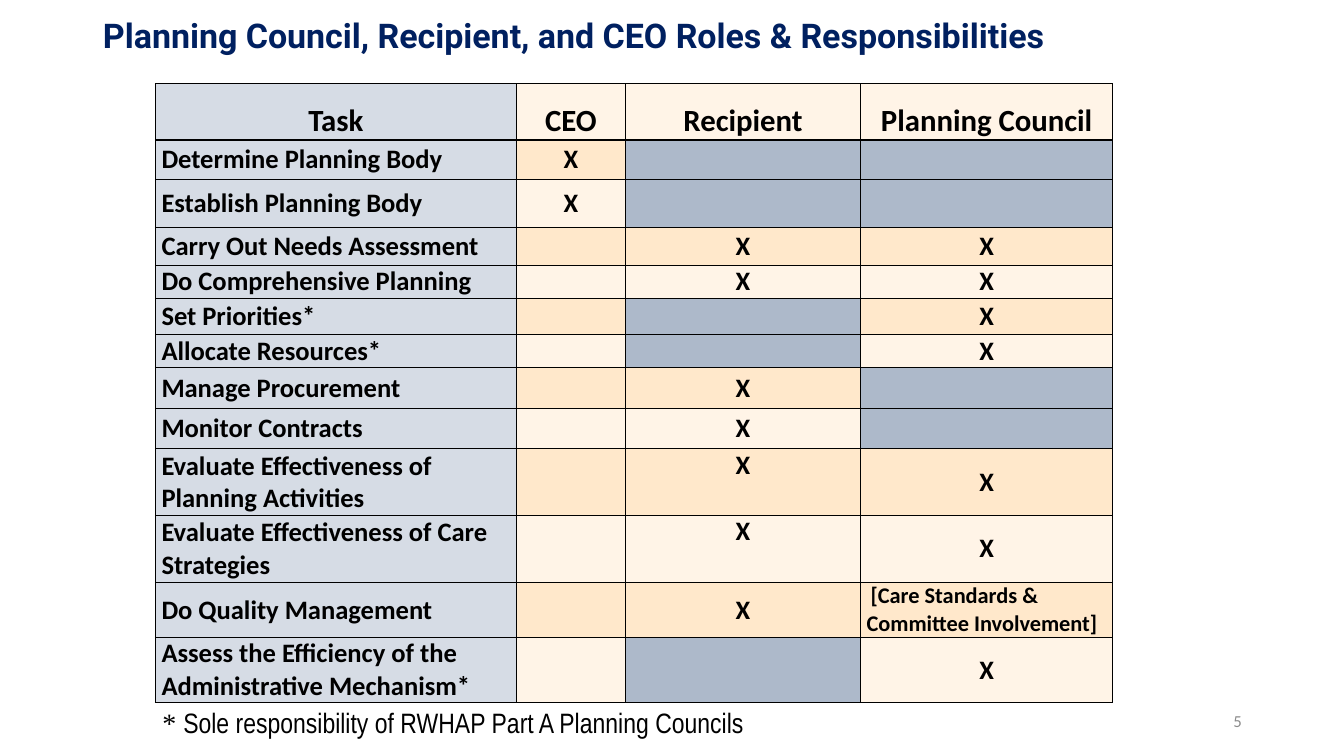
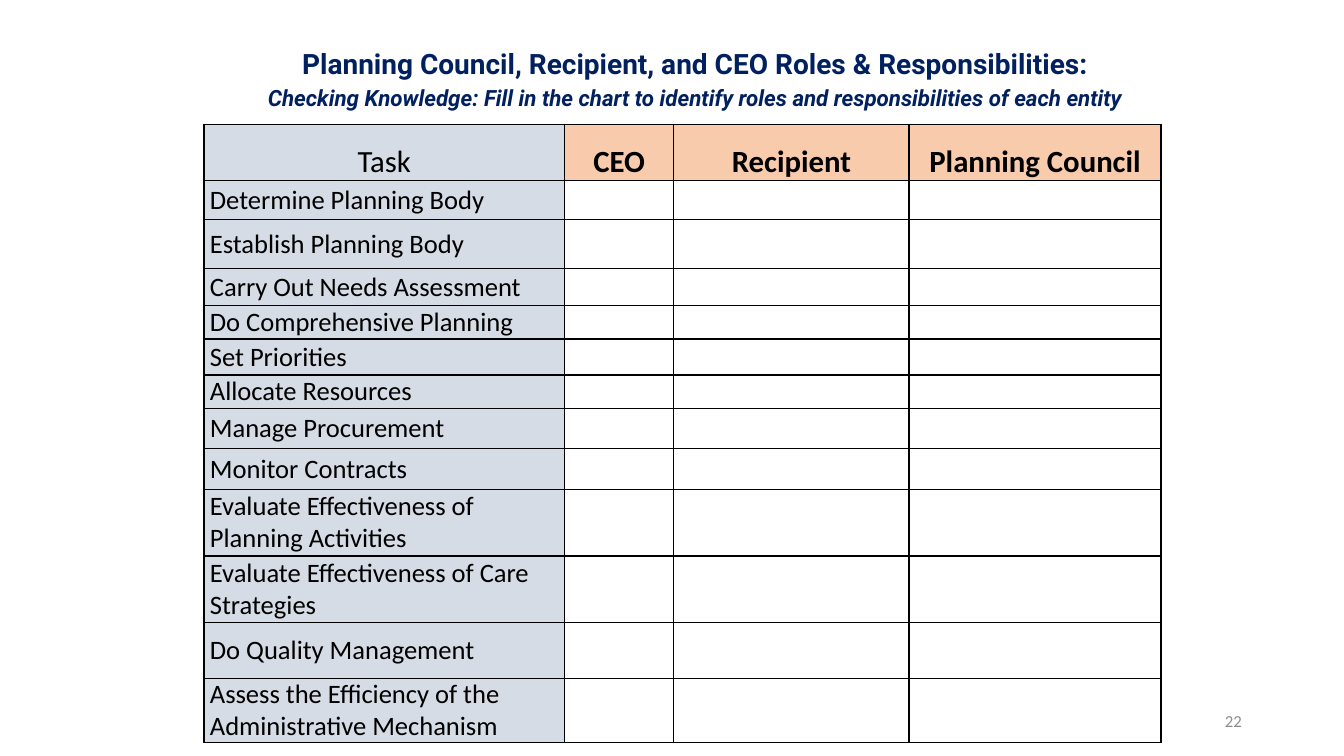
from dataclasses import dataclass
from typing import Any

from lxml import etree
from pptx import Presentation
from pptx.dml.color import RGBColor
from pptx.enum.text import MSO_ANCHOR, PP_ALIGN
from pptx.oxml.ns import qn
from pptx.util import Cm, Pt

LEFT, CENTER, RIGHT = PP_ALIGN.LEFT, PP_ALIGN.CENTER, PP_ALIGN.RIGHT
TOP, MIDDLE = MSO_ANCHOR.TOP, MSO_ANCHOR.MIDDLE

COLORS = {
    "navy": "002060", "black": "000000", "gray": "8C8C8C", "white": "FFFFFF",
    "task": "D6DCE5", "blocked": "ADB9CA", "peach": "F8CBAD",
    "light": "FFF4E7", "dark": "FFE8CB",
}
TITLE_FORMAT = {"name": "Roboto", "size": Pt(24.3), "bold": True}
HEADER_FORMAT = {"name": "Calibri", "size": Pt(22), "bold": True}
BODY_FORMAT = {"name": "Calibri", "size": Pt(19), "bold": True}
NUMBER_FORMAT = {"name": "Calibri", "size": Pt(12)}

TITLE = "Planning Council, Recipient, and CEO Roles & Responsibilities"
HEADERS = ("Task", "CEO", "Recipient", "Planning Council")
COLUMN_WIDTHS = (9.09, 2.75, 5.93, 6.35)
HEADER_HEIGHT = 1.42
CARE_NOTE = "[Care Standards & Committee Involvement]"


@dataclass(frozen=True)
class Task:
    name: str
    height: float
    marks: str  # CEO, recipient, council: X = role, # = blocked, . = empty, C = care note
    sole: bool = False
    recipient_anchor: Any = MIDDLE


@dataclass(frozen=True)
class Box:
    left: float
    top: float
    width: float
    height: float

    def lengths(self) -> tuple:
        return Cm(self.left), Cm(self.top), Cm(self.width), Cm(self.height)


TASKS = (
    Task("Determine Planning Body", 0.99, "X##"),
    Task("Establish Planning Body", 1.22, "X##"),
    Task("Carry Out Needs Assessment", 0.94, ".XX"),
    Task("Do Comprehensive Planning", 0.84, ".XX"),
    Task("Set Priorities", 0.91, ".#X", sole=True),
    Task("Allocate Resources", 0.84, ".#X", sole=True),
    Task("Manage Procurement", 1.02, ".X#"),
    Task("Monitor Contracts", 1.02, ".X#"),
    Task("Evaluate Effectiveness of Planning Activities", 1.68, ".XX", recipient_anchor=TOP),
    Task("Evaluate Effectiveness of Care Strategies", 1.68, ".XX", recipient_anchor=TOP),
    Task("Do Quality Management", 1.4, ".XC"),
    Task("Assess the Efficiency of the Administrative Mechanism", 1.63, ".#X", sole=True),
)


def rgb(name: str) -> RGBColor:
    return RGBColor.from_string(COLORS[name])


def add_text(paragraph: Any, text: str, font_format: dict, color: str = "black") -> None:
    run = paragraph.add_run()
    run.text = text
    for attribute, value in font_format.items():
        setattr(run.font, attribute, value)
    run.font.color.rgb = rgb(color)


def set_title(slide: Any, box: Box, lines: list, alignment: Any, spacing: float) -> None:
    title = slide.shapes.title
    title.left, title.top, title.width, title.height = box.lengths()
    frame = title.text_frame
    frame.word_wrap = True
    frame.vertical_anchor = MIDDLE
    for index, (text, changes) in enumerate(lines):
        paragraph = frame.add_paragraph() if index else frame.paragraphs[0]
        paragraph.alignment = alignment
        paragraph.line_spacing = spacing
        add_text(paragraph, text, TITLE_FORMAT | changes, "navy")


def add_page_number(slide: Any, number: int) -> None:
    frame = slide.shapes.add_textbox(*Box(23.93, 17.65, 7.62, 1.02).lengths()).text_frame
    frame.word_wrap = True
    frame.vertical_anchor = MIDDLE
    frame.paragraphs[0].alignment = RIGHT
    add_text(frame.paragraphs[0], str(number), NUMBER_FORMAT, "gray")


def style_cell(cell: Any, fill: str, anchor: Any = MIDDLE) -> None:
    cell.margin_left = cell.margin_right = Cm(0.15)
    cell.margin_top = cell.margin_bottom = 0
    cell.vertical_anchor = anchor
    # Borders come before the fill in the cell properties
    properties = cell._tc.get_or_add_tcPr()
    for side in ("a:lnL", "a:lnR", "a:lnT", "a:lnB"):
        line = etree.SubElement(properties, qn(side), w=str(Pt(1)))
        solid = etree.SubElement(line, qn("a:solidFill"))
        etree.SubElement(solid, qn("a:srgbClr"), val=COLORS["black"])
    cell.fill.solid()
    cell.fill.fore_color.rgb = rgb(fill)


def fill_mark(cell: Any, mark: str) -> None:
    paragraph = cell.text_frame.paragraphs[0]
    if mark == "X":
        paragraph.alignment = CENTER
        add_text(paragraph, mark, BODY_FORMAT)
    elif mark == "C":
        paragraph.alignment = LEFT
        paragraph._p.get_or_add_pPr().set("indent", str(Cm(0.1)))
        add_text(paragraph, CARE_NOTE, BODY_FORMAT | {"size": Pt(16)})


def add_roles_table(slide: Any, left: float, top: float, answered: bool) -> None:
    heights = (HEADER_HEIGHT, *(task.height for task in TASKS))
    box = Box(left, top, sum(COLUMN_WIDTHS), sum(heights))
    table = slide.shapes.add_table(len(heights), len(HEADERS), *box.lengths()).table
    table.first_row = table.horz_banding = False
    for column, width in zip(table.columns, COLUMN_WIDTHS):
        column.width = Cm(width)
    for row, height in zip(table.rows, heights):
        row.height = Cm(height)

    # Header row
    for column, header in enumerate(HEADERS):
        cell = table.cell(0, column)
        role_fill = "light" if answered else "peach"
        style_cell(cell, role_fill if column else "task")
        paragraph = cell.text_frame.paragraphs[0]
        paragraph.alignment = CENTER
        paragraph.line_spacing = 1.5
        add_text(paragraph, header, HEADER_FORMAT | {"bold": answered or column > 0})

    # Task rows
    for row, task in enumerate(TASKS, start=1):
        name_cell = table.cell(row, 0)
        style_cell(name_cell, "task")
        name = task.name + ("*" if answered and task.sole else "")
        add_text(name_cell.text_frame.paragraphs[0], name, BODY_FORMAT | {"bold": answered})
        band = "dark" if row % 2 else "light"
        for column, mark in enumerate(task.marks, start=1):
            cell = table.cell(row, column)
            if not answered:
                style_cell(cell, "white")
                continue
            anchor = task.recipient_anchor if column == 2 else MIDDLE
            style_cell(cell, "blocked" if mark == "#" else band, anchor)
            fill_mark(cell, mark)


def add_footnote(slide: Any) -> None:
    frame = slide.shapes.add_textbox(*Box(3.84, 17.65, 15.29, 1.12).lengths()).text_frame
    frame.word_wrap = False
    paragraph = frame.paragraphs[0]
    add_text(paragraph, "* ", {"name": "Times New Roman", "size": Pt(20)})
    add_text(paragraph, "Sole responsibility of RWHAP Part A Planning Councils",
             {"name": "Arial Narrow", "size": Pt(20)})


def main() -> None:
    presentation = Presentation()
    presentation.slide_width, presentation.slide_height = Cm(33.87), Cm(19.05)
    title_only = presentation.slide_layouts[5]

    # Completed chart
    slide = presentation.slides.add_slide(title_only)
    set_title(slide, Box(2.34, 0.15, 29.21, 1.57), [(TITLE, {})], LEFT, 0.9)
    add_roles_table(slide, 3.92, 2.11, answered=True)
    add_footnote(slide)
    add_page_number(slide, 5)

    # Chart to fill in
    slide = presentation.slides.add_slide(title_only)
    subtitle = "Checking Knowledge: Fill in the chart to identify roles and responsibilities of each entity"
    lines = [(TITLE + ":", {"size": Pt(20)}), (subtitle, {"size": Pt(16), "italic": True})]
    set_title(slide, Box(4.06, 1.02, 26.92, 1.78), lines, CENTER, 1.15)
    add_roles_table(slide, 5.14, 3.13, answered=False)
    add_page_number(slide, 22)

    presentation.save("out.pptx")


if __name__ == "__main__":
    main()
